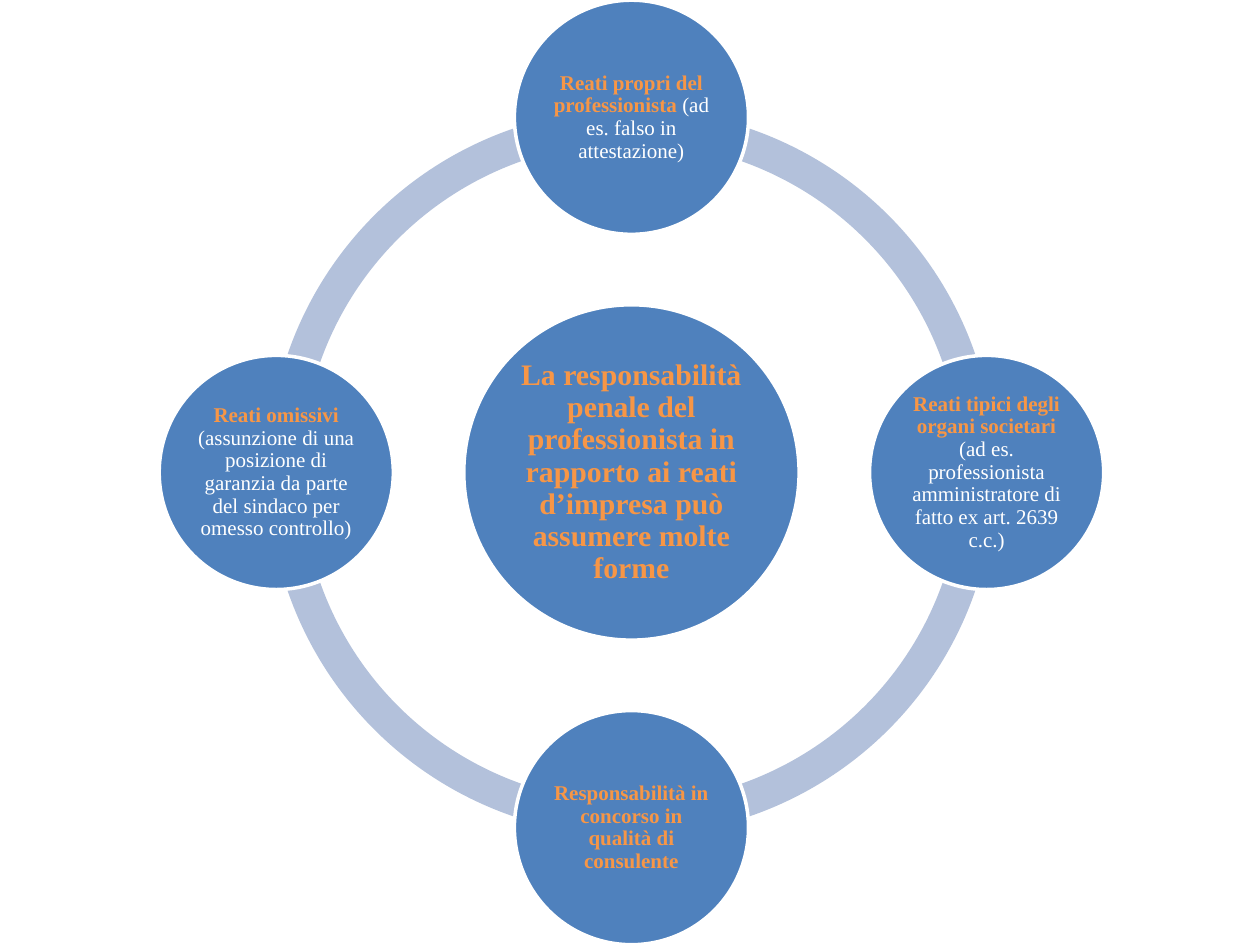
import math

from pptx import Presentation
from pptx import util as u
from pptx.dml.color import RGBColor
from pptx.enum import shapes, text

CENTRE_X, CENTRE_Y = 12.73, 9.525
ORBIT = 7.16
RING_SIZE, HUB_SIZE, NODE_SIZE = 14.66, 6.76, 4.72
QUARTER = 54


def colour(value):
    return RGBColor.from_string(value)


def add_round(kind, x, y, size, fill):
    shape = page.shapes.add_shape(
        kind, u.Cm(x - size / 2), u.Cm(y - size / 2), u.Cm(size), u.Cm(size))
    shape.shadow.inherit = False
    shape.fill.solid()
    shape.fill.fore_color.rgb = colour(fill)
    shape.line.fill.background()
    return shape


deck = Presentation()
deck.slide_width = u.Cm(25.4)
deck.slide_height = u.Cm(19.05)
page = deck.slides.add_slide(deck.slide_layouts[6])

for start in (2, 1, 0, 3):
    arc = add_round(shapes.MSO_SHAPE.BLOCK_ARC, CENTRE_X, CENTRE_Y, RING_SIZE, "B3C1DB")
    arc.adjustments[0] = start * QUARTER
    arc.adjustments[1] = (start + 1) % 4 * QUARTER
    arc.adjustments[2] = 0.046

hub = (
    "La responsabilità penale del professionista in rapporto ai reati "
    "d’impresa può assumere molte forme", "")
nodes = [
    ("Reati propri del professionista ", "(ad es. falso in attestazione)"),
    ("Reati tipici degli organi societari ",
     "(ad es. professionista amministratore di fatto ex art. 2639 c.c.)"),
    ("Responsabilità in concorso in qualità di consulente", ""),
    ("Reati omissivi ",
     "(assunzione di una posizione di garanzia da parte del sindaco per omesso controllo)"),
]

circles = [(CENTRE_X, CENTRE_Y, HUB_SIZE, 17, hub)]
for index, words in enumerate(nodes):
    angle = math.radians(90 * index)
    x = CENTRE_X + ORBIT * math.sin(angle)
    y = CENTRE_Y - ORBIT * math.cos(angle)
    circles.append((x, y, NODE_SIZE, 12, words))

for x, y, size, points, (heading, detail) in circles:
    circle = add_round(shapes.MSO_SHAPE.OVAL, x, y, size, "4F81BD")
    circle.line.color.rgb = colour("FFFFFF")
    circle.line.width = u.Pt(2)
    box = circle.text_frame
    box.word_wrap = True
    box.vertical_anchor = text.MSO_ANCHOR.MIDDLE
    box.margin_left = box.margin_right = u.Cm(0.05)
    box.margin_top = box.margin_bottom = u.Cm(0.05)
    para = box.paragraphs[0]
    para.alignment = text.PP_ALIGN.CENTER
    para.line_spacing = 0.9
    for words, ink, bold in ((heading, "F79646", True), (detail, "FFFFFF", False)):
        if words:
            span = para.add_run()
            span.text = words
            span.font.name = "Times New Roman"
            span.font.size = u.Pt(points)
            span.font.bold = bold
            span.font.color.rgb = colour(ink)

deck.save("out.pptx")
